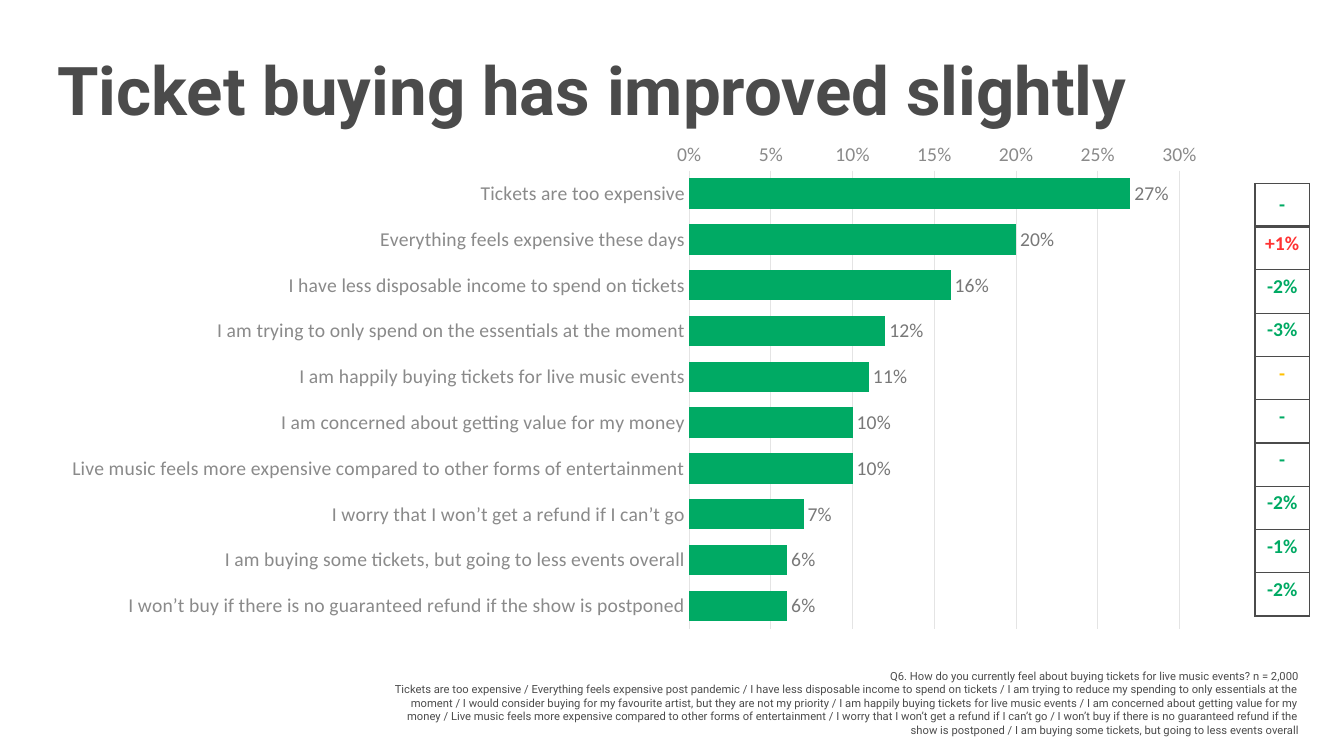
from lxml import etree
from pptx import Presentation
from pptx.chart.data import CategoryChartData
from pptx.dml.color import RGBColor
from pptx.enum.chart import XL_CHART_TYPE, XL_LABEL_POSITION, XL_TICK_MARK
from pptx.enum.text import MSO_ANCHOR, MSO_AUTO_SIZE, PP_ALIGN
from pptx.oxml import parse_xml
from pptx.oxml.ns import nsdecls, qn
from pptx.util import Pt

BAR_CLUSTERED = XL_CHART_TYPE.BAR_CLUSTERED
OUTSIDE_END = XL_LABEL_POSITION.OUTSIDE_END
NO_TICK = XL_TICK_MARK.NONE
TOP, MIDDLE = MSO_ANCHOR.TOP, MSO_ANCHOR.MIDDLE
NO_AUTOSIZE = MSO_AUTO_SIZE.NONE
LEFT, CENTER, RIGHT = PP_ALIGN.LEFT, PP_ALIGN.CENTER, PP_ALIGN.RIGHT

WHITE = RGBColor(0xFF, 0xFF, 0xFF)
INK = RGBColor(0x4B, 0x4B, 0x4B)
AXIS_GREY = RGBColor(0x8A, 0x8A, 0x8A)
LABEL_GREY = RGBColor(0x78, 0x78, 0x78)
GRID_GREY = RGBColor(0xE4, 0xE4, 0xE4)
GREEN = RGBColor(0x00, 0xAA, 0x64)
RED = RGBColor(0xFF, 0x32, 0x32)
AMBER = RGBColor(0xFF, 0xC0, 0x00)

TITLE_FORMAT = {"name": "Roboto", "size": Pt(48), "bold": True}
NOTE_FORMAT = {"name": "Roboto", "size": Pt(8)}
CHART_FORMAT = {"name": "Calibri", "size": Pt(14)}
CHANGE_FORMAT = {"name": "Calibri", "size": Pt(14), "bold": True}

# Statement, share of answers, change, colour of the change
ANSWERS = [
    ("Tickets are too expensive", 0.27, "-", GREEN),
    ("Everything feels expensive these days", 0.20, "+1%", RED),
    ("I have less disposable income to spend on tickets", 0.16, "-2%", GREEN),
    ("I am trying to only spend on the essentials at the moment", 0.12, "-3%", GREEN),
    ("I am happily buying tickets for live music events", 0.11, "-", AMBER),
    ("I am concerned about getting value for my money", 0.10, "-", GREEN),
    ("Live music feels more expensive compared to other forms of entertainment",
     0.10, "-", GREEN),
    ("I worry that I won’t get a refund if I can’t go", 0.07, "-2%", GREEN),
    ("I am buying some tickets, but going to less events overall", 0.06, "-1%", GREEN),
    ("I won’t buy if there is no guaranteed refund if the show is postponed",
     0.06, "-2%", GREEN),
]
NOTES = [
    "Q6. How do you currently feel about buying tickets for live music events? n = 2,000",
    "Tickets are too expensive / Everything feels expensive post pandemic / "
    "I have less disposable income to spend on tickets / "
    "I am trying to reduce my spending to only essentials at the moment / "
    "I would consider buying for my favourite artist, but they are not my priority / "
    "I am happily buying tickets for live music events / "
    "I am concerned about getting value for my money / "
    "Live music feels more expensive compared to other forms of entertainment / "
    "I worry that I won’t get a refund if I can’t go / "
    "I won’t buy if there is no guaranteed refund if the show is postponed / "
    "I am buying some tickets, but going to less events overall",
]


def format_font(font, values, color):
    for name, value in values.items():
        setattr(font, name, value)
    font.color.rgb = color


def place(shape, left, top, width, height):
    shape.left, shape.top = Pt(left), Pt(top)
    shape.width, shape.height = Pt(width), Pt(height)


def write_lines(box, lines, values, align):
    frame = box.text_frame
    frame.word_wrap = True
    frame.auto_size = NO_AUTOSIZE
    frame.vertical_anchor = TOP
    for index, line in enumerate(lines):
        para = frame.add_paragraph() if index else frame.paragraphs[0]
        para.text = line
        para.alignment = align
        format_font(para.font, values, INK)


def set_plot_area(chart, **fractions):
    """Fix the inner plot area as fractions of the chart frame."""
    plot_area = chart._chartSpace.chart.plotArea
    for old_layout in plot_area.findall(qn("c:layout")):
        plot_area.remove(old_layout)
    layout = parse_xml(
        f'<c:layout {nsdecls("c")}><c:manualLayout><c:layoutTarget val="inner"/>'
        '<c:xMode val="edge"/><c:yMode val="edge"/></c:manualLayout></c:layout>')
    for name, value in fractions.items():
        etree.SubElement(layout[0], qn(f"c:{name}"), val=str(value))
    plot_area.insert(0, layout)


def add_answer_chart(slide):
    data = CategoryChartData(number_format="0%")
    data.categories = [answer[0] for answer in ANSWERS]
    data.add_series("Series 1", [answer[1] for answer in ANSWERS])
    chart = slide.shapes.add_chart(
        BAR_CLUSTERED, Pt(33.8), Pt(96.5), Pt(833.8), Pt(363.6), data).chart
    chart.has_legend = False
    chart.has_title = False
    format_font(chart.font, CHART_FORMAT, INK)
    set_plot_area(chart, x=0.55, y=0.07, w=0.42, h=0.9)

    # Axes
    categories, values = chart.category_axis, chart.value_axis
    for axis in (categories, values):
        axis.major_tick_mark = axis.minor_tick_mark = NO_TICK
        format_font(axis.tick_labels.font, CHART_FORMAT, AXIS_GREY)
    categories.reverse_order = True
    values.minimum_scale, values.maximum_scale, values.major_unit = 0, 0.3, 0.05
    values.tick_labels.number_format = "0%"
    values.tick_labels.number_format_is_linked = False
    values.format.line.fill.background()
    for line in (categories.format.line, values.major_gridlines.format.line):
        line.color.rgb = GRID_GREY
        line.width = Pt(0.75)

    # Bars and their labels
    plot = chart.plots[0]
    plot.gap_width = 50
    plot.vary_by_categories = False
    fill = plot.series[0].format.fill
    fill.solid()
    fill.fore_color.rgb = GREEN
    plot.has_data_labels = True
    labels = plot.data_labels
    labels.show_value = True
    labels.position = OUTSIDE_END
    labels.number_format = "0%"
    labels.number_format_is_linked = False
    format_font(labels.font, CHART_FORMAT, LABEL_GREY)


def set_border(cell, side, width):
    line = parse_xml(
        f'<a:{side} {nsdecls("a")} w="{Pt(width)}"><a:solidFill>'
        f'<a:srgbClr val="{INK}"/></a:solidFill></a:{side}>')
    cell._tc.get_or_add_tcPr().append(line)


def add_change_table(slide):
    count, row_height = len(ANSWERS), 30.9
    table = slide.shapes.add_table(
        count, 1, Pt(896.4), Pt(131), Pt(39), Pt(row_height * count)).table
    table.first_row = table.horz_banding = False
    for index, (_, _, change, color) in enumerate(ANSWERS):
        table.rows[index].height = Pt(row_height)
        cell = table.cell(index, 0)
        cell.margin_left = cell.margin_right = Pt(1)
        cell.vertical_anchor = TOP if index else MIDDLE
        # The rule below the first row is heavier
        widths = {"lnL": 1, "lnR": 1, "lnT": 2 if index == 1 else 1,
                  "lnB": 1 if index else 2}
        for side, width in widths.items():
            set_border(cell, side, width)
        cell.fill.solid()
        cell.fill.fore_color.rgb = WHITE
        para = cell.text_frame.paragraphs[0]
        para.alignment = CENTER
        span = para.add_run()
        span.text = change
        format_font(span.font, CHANGE_FORMAT, color)


def main():
    deck = Presentation()
    deck.slide_width, deck.slide_height = Pt(960), Pt(540)
    page = deck.slides.add_slide(deck.slide_layouts[5])

    # Title
    title = page.shapes.title
    place(title, 33.8, 31, 912.2, 65.5)
    write_lines(title, ["Ticket buying has improved slightly"], TITLE_FORMAT, LEFT)

    # Answers and changes
    add_answer_chart(page)
    add_change_table(page)

    # Question and full wording
    note = page.shapes.add_textbox(Pt(274.3), Pt(474.5), Pt(661), Pt(65.5))
    write_lines(note, NOTES, NOTE_FORMAT, RIGHT)

    deck.save("out.pptx")


if __name__ == "__main__":
    main()
